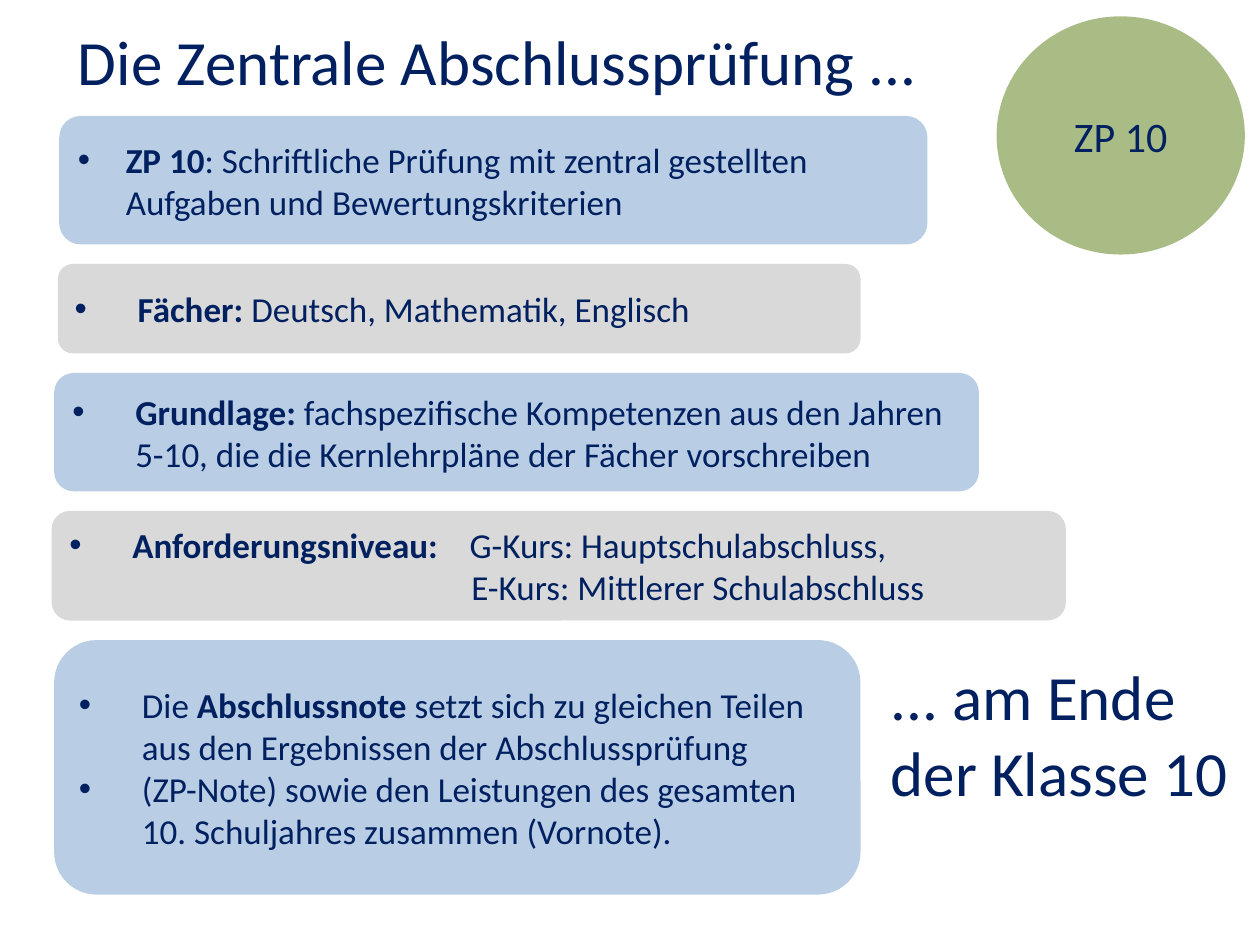
import pptx
import pptx.util
import pptx.dml.color
import pptx.enum.shapes
import pptx.enum.text
import pptx.oxml
import pptx.oxml.ns

THEME = {
    "font": "Calibri",
    "ink": "002060",
    "blue": "B9CDE5",
    "grey": "D9D9D9",
    "green": "77933C",
    "heading": 36,
    "badge": 24,
    "body": 20,
}

presentation = pptx.Presentation()
presentation.slide_width = pptx.util.Inches(10)
presentation.slide_height = pptx.util.Inches(7.5)
slide = presentation.slides.add_slide(presentation.slide_layouts[6])

# Grid of 100 columns by 75 rows
COLUMN = presentation.slide_width / 100
ROW = presentation.slide_height / 75
SHAPES = pptx.enum.shapes.MSO_SHAPE
ALIGN = pptx.enum.text.PP_ALIGN


def add_block(left, top, width, height, kind=None, fill=None):
    """Add a filled shape, or a text box when no kind is given."""
    box = [round(n) for n in (left * COLUMN, top * ROW, width * COLUMN, height * ROW)]
    if kind is None:
        return slide.shapes.add_textbox(*box)
    shape = slide.shapes.add_shape(kind, *box)
    shape.shadow.inherit = False
    shape.fill.solid()
    shape.fill.fore_color.rgb = pptx.dml.color.RGBColor.from_string(THEME[fill])
    shape.line.fill.background()
    shape.text_frame.vertical_anchor = pptx.enum.text.MSO_ANCHOR.MIDDLE
    return shape


def write(paragraph, runs, size, align=ALIGN.LEFT):
    """Add (text, bold) runs in the theme's font and ink."""
    paragraph.alignment = align
    for text, bold in runs:
        run = paragraph.add_run()
        run.text = text
        run.font.name = THEME["font"]
        run.font.size = pptx.util.Pt(THEME[size])
        run.font.bold = bold
        run.font.color.rgb = pptx.dml.color.RGBColor.from_string(THEME["ink"])


# Round badge, partly transparent
badge = add_block(79.1, 1.3, 19.7, 18.9, SHAPES.FLOWCHART_CONNECTOR, "green")
color = badge.fill._xPr.find(".//" + pptx.oxml.ns.qn("a:srgbClr"))
color.append(pptx.oxml.parse_xml(
    f'<a:alpha {pptx.oxml.ns.nsdecls("a")} val="62000"/>'))
write(badge.text_frame.paragraphs[0], [("ZP 10", False)], "badge", ALIGN.CENTER)

# Title
title = add_block(5.2, 1.3, 96.7, 7.1).text_frame
title.word_wrap = True
write(title.paragraphs[0], [("Die Zentrale Abschlussprüfung ...", False)], "heading")

# Closing words
closing = add_block(69.7, 51.7, 29.3, 13.1).text_frame
closing.word_wrap = False
write(closing.paragraphs[0], [("... am Ende", False)], "heading")
write(closing.add_paragraph(), [("der Klasse 10", False)], "heading", ALIGN.RIGHT)

# Cards: left, width, height, fill, paragraphs of (margin, bullet, runs)
cards = [
    (4.7, 68.9, 10.2, "blue", [
        (3.8, True, [("ZP 10", True),
                     (": Schriftliche Prüfung mit zentral gestellten "
                      "Aufgaben und Bewertungskriterien", False)])]),
    (4.6, 63.7, 7.1, "grey", [
        (5, True, [("Fächer:", True), (" Deutsch, Mathematik, Englisch", False)])]),
    (4.3, 73.4, 9.4, "blue", [
        (5, True, [("Grundlage:", True),
                   (" fachspezifische Kompetenzen aus den Jahren 5-10, "
                    "die die Kernlehrpläne der Fächer vorschreiben", False)])]),
    (4.1, 80.5, 8.7, "grey", [
        (5, True, [("Anforderungsniveau:", True), (" ", False),
                   ("G-Kurs: Hauptschulabschluss,", False)]),
        (31.9, False, [("E-Kurs: Mittlerer Schulabschluss", False)])]),
    (4.3, 64, 20.2, "blue", [
        (5, True, [("Die ", False), ("Abschlussnote", True),
                   (" setzt sich zu gleichen Teilen aus den Ergebnissen "
                    "der Abschlussprüfung", False)]),
        (5, True, [("(ZP-Note) sowie den Leistungen des gesamten "
                    "10. Schuljahres zusammen (Vornote).", False)])]),
]
CARD_GAP = 1.55
LEVEL_GAP = 1350  # extra width of the space before the course level, 1/100 pt

top = 9.2
for left, width, height, fill, paragraphs in cards:
    frame = add_block(left, top, width, height, SHAPES.ROUNDED_RECTANGLE, fill).text_frame
    frame.word_wrap = True
    for index, (margin, bullet, runs) in enumerate(paragraphs):
        paragraph = frame.add_paragraph() if index else frame.paragraphs[0]
        properties = paragraph._p.get_or_add_pPr()
        properties.set("marL", str(round(margin * COLUMN)))
        properties.set("indent", str(round(-margin * COLUMN) if bullet else 0))
        if bullet:
            for tag in ('buFont typeface="Arial"', 'buChar char="•"'):
                properties.append(pptx.oxml.parse_xml(
                    f'<a:{tag} {pptx.oxml.ns.nsdecls("a")}/>'))
        write(paragraph, runs, "body")
        for run in paragraph.runs:
            if run.text == " ":
                run._r.get_or_add_rPr().set("spc", str(LEVEL_GAP))
    top += height + CARD_GAP

presentation.save("out.pptx")
